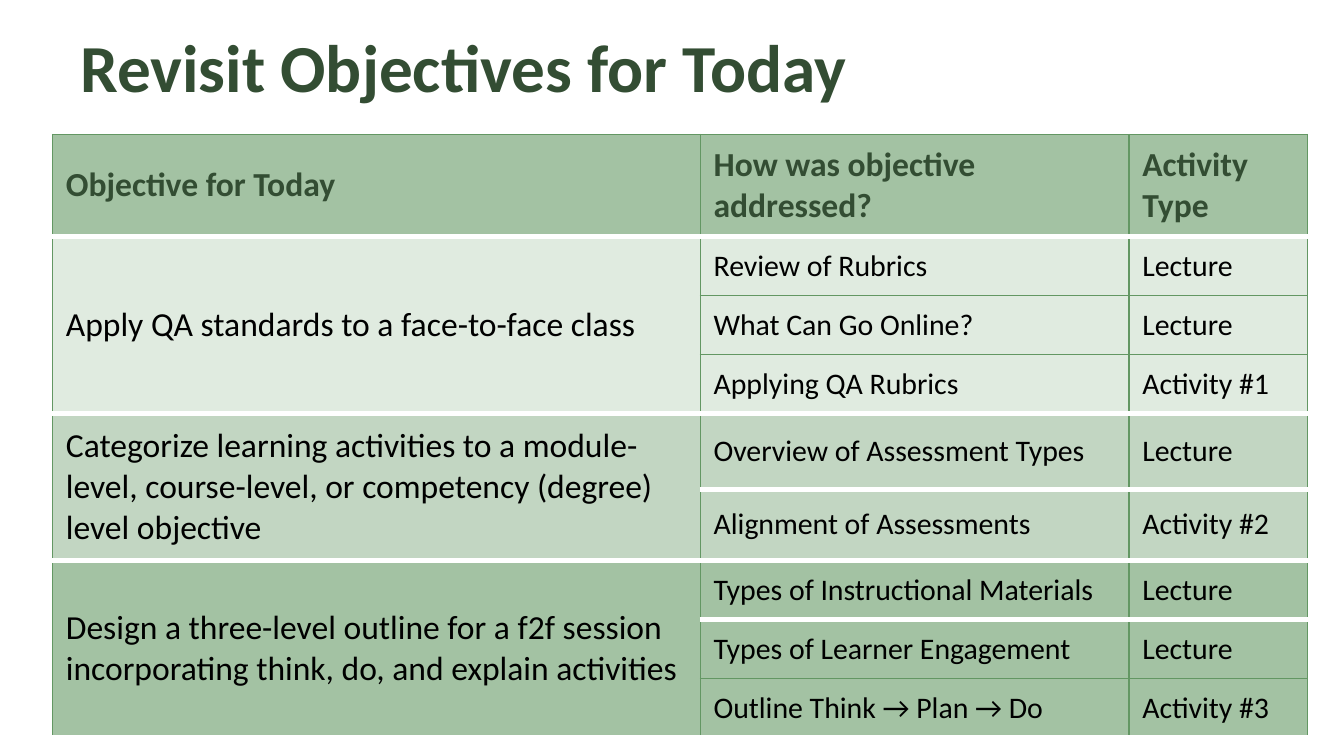
import pptx
import pptx.dml.color
import pptx.enum.text
import pptx.oxml.ns
import pptx.util
from lxml import etree

THEME = {
    "font": "Calibri",
    "dark": "334D33", "text": "000000", "line": "639763", "rule": "FFFFFF",
    "header": "A3C2A3", "bands": ["E0EBE0", "C2D6C2", "A3C2A3"],
    "title_pt": 36, "objective_pt": 18, "item_pt": 16,
    "thin": 0.75, "thick": 3,
}

HEADINGS = ["Objective for Today", "How was objective addressed?", "Activity Type"]
# Each objective with its topics: how addressed, activity type
OBJECTIVES = [
    ("Apply QA standards to a face-to-face class",
     [("Review of Rubrics", "Lecture"),
      ("What Can Go Online?", "Lecture"),
      ("Applying QA Rubrics", "Activity #1")]),
    ("Categorize learning activities to a module-level, course-level, "
     "or competency (degree) level objective",
     [("Overview of Assessment Types", "Lecture"),
      ("Alignment of Assessments", "Activity #2")]),
    ("Design a three-level outline for a f2f session incorporating think, do, "
     "and explain activities",
     [("Types of Instructional Materials", "Lecture"),
      ("Types of Learner Engagement", "Lecture"),
      ("Outline Think → Plan → Do", "Activity #3")]),
]
COLS = [4.82, 3.19, 1.33]
ROW = 0.44
ROWS = [0.76, ROW, ROW, ROW, 0.56, 0.53, ROW, ROW, ROW]
THICK_BELOW = {0, 3, 4, 5, 6, 8}  # rows closed by a thick white rule


def add_run(tf, text, size, color, bold=False):
    r = tf.paragraphs[0].add_run()
    r.text = text
    r.font.name = THEME["font"]
    r.font.size = pptx.util.Pt(size)
    r.font.bold = bold
    r.font.color.rgb = pptx.dml.color.RGBColor.from_string(color)


def add_border(cell, side, thick):
    width, color = ("thick", "rule") if thick else ("thin", "line")
    qn = pptx.oxml.ns.qn
    ln = etree.SubElement(cell._tc.get_or_add_tcPr(), qn(f"a:ln{side}"),
                          w=str(pptx.util.Pt(THEME[width])))
    fill = etree.SubElement(ln, qn("a:solidFill"))
    etree.SubElement(fill, qn("a:srgbClr"), val=THEME[color])


# Widescreen slide, 16:9
prs = pptx.Presentation()
prs.slide_width = pptx.util.Inches(10)
prs.slide_height = prs.slide_width * 9 // 16
s = prs.slides.add_slide(prs.slide_layouts[6])

# Title
sp = s.shapes.add_textbox(*map(pptx.util.Inches, (0.5, 0.14, 9, 0.98)))
sp.text_frame.word_wrap = True
add_run(sp.text_frame, "Revisit Objectives for Today", THEME["title_pt"],
        THEME["dark"], True)

# Table grid
tbl = s.shapes.add_table(len(ROWS), len(COLS), *map(
    pptx.util.Inches, (0.39, 1, sum(COLS), sum(ROWS)))).table
tbl.first_row = tbl.horz_banding = False
for col, width in zip(tbl.columns, COLS):
    col.width = pptx.util.Inches(width)
for row, height in zip(tbl.rows, ROWS):
    row.height = pptx.util.Inches(height)

# Header text
for c, heading in enumerate(HEADINGS):
    add_run(tbl.cell(0, c).text_frame, heading, THEME["objective_pt"],
            THEME["dark"], True)

# Objectives, each spanning the rows of its topics
fills = [THEME["header"]]
inside = set()  # rows whose lower edge lies inside a merged objective cell
for (objective, topics), band in zip(OBJECTIVES, THEME["bands"]):
    first = len(fills)
    last = first + len(topics) - 1
    tbl.cell(first, 0).merge(tbl.cell(last, 0))
    add_run(tbl.cell(first, 0).text_frame, objective, THEME["objective_pt"],
            THEME["text"])
    for r, topic in enumerate(topics, first):
        for c, text in enumerate(topic, 1):
            add_run(tbl.cell(r, c).text_frame, text, THEME["item_pt"], THEME["text"])
    fills += [band] * len(topics)
    inside.update(range(first, last))

# Borders, fills and anchoring
for r, fill in enumerate(fills):
    for c in range(len(COLS)):
        cell = tbl.cell(r, c)
        add_border(cell, "L", False)
        add_border(cell, "R", False)
        if c > 0 or r - 1 not in inside:
            add_border(cell, "T", r - 1 in THICK_BELOW)
        if c > 0 or r not in inside or cell.is_merge_origin:
            add_border(cell, "B", r in THICK_BELOW or c == 0)
        cell.fill.solid()
        cell.fill.fore_color.rgb = pptx.dml.color.RGBColor.from_string(fill)
        cell.vertical_anchor = pptx.enum.text.MSO_ANCHOR.MIDDLE

prs.save("out.pptx")
